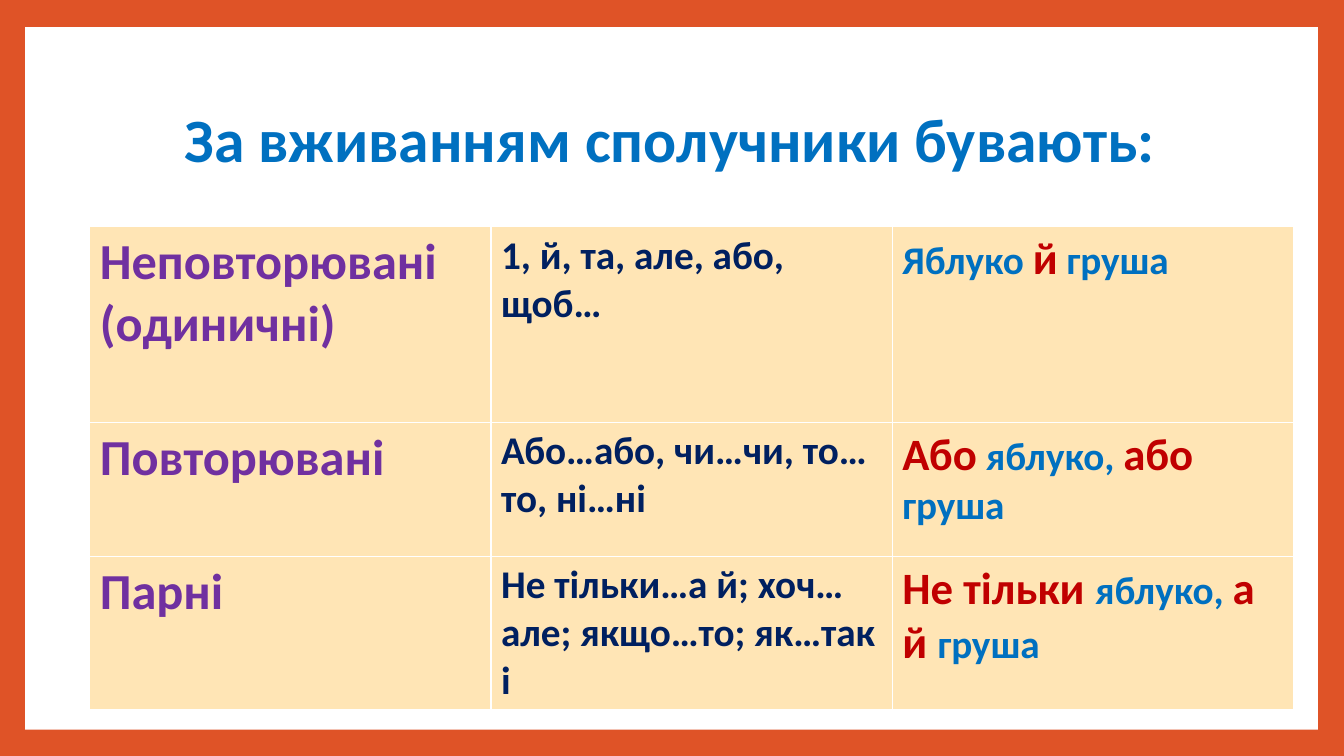
from pptx import Presentation
from pptx import util as u
from pptx.dml.color import RGBColor
from pptx.enum import shapes, text

ORANGE = RGBColor(0xDF, 0x53, 0x27)
WHITE = RGBColor(0xFF, 0xFF, 0xFF)
CREAM = RGBColor(0xFF, 0xE5, 0xB5)
BLUE = RGBColor(0x00, 0x70, 0xC0)
NAVY = RGBColor(0x00, 0x20, 0x60)
PURPLE = RGBColor(0x70, 0x30, 0xA0)
RED = RGBColor(0xC0, 0x00, 0x00)

KIND = (36, PURPLE)
LIST = (28, NAVY)
WORD = (28, BLUE)
JOIN = (32, RED)

ROW_HEIGHTS = (1.94, 1.33, 1.52)
ROWS = [
    [[("Неповторювані (одиничні)", KIND)],
     [("1, й, та, але, або, щоб…", LIST)],
     [("Яблуко ", WORD), ("й", JOIN), (" груша", WORD)]],
    [[("Повторювані", KIND)],
     [("Або…або, чи…чи, то…то, ні…ні", LIST)],
     [("Або", JOIN), (" яблуко, ", WORD), ("або", JOIN), (" груша", WORD)]],
    [[("Парні", KIND)],
     [("Не тільки…а й; хоч…але; якщо…то; як…так і", LIST)],
     [("Не тільки ", JOIN), ("яблуко, ", WORD), ("а й ", JOIN), ("груша", WORD)]],
]


class SlideBuilder:
    """Draws styled elements on the current page."""

    def __init__(self, page, font_name):
        self.page = page
        self.font_name = font_name

    def background(self, color):
        fill = self.page.background.fill
        fill.solid()
        fill.fore_color.rgb = color

    def panel(self, left, top, width, height, color):
        box = self.page.shapes.add_shape(
            shapes.MSO_SHAPE.RECTANGLE, u.Inches(left), u.Inches(top),
            u.Inches(width), u.Inches(height))
        box.shadow.inherit = False
        box.fill.solid()
        box.fill.fore_color.rgb = color
        box.line.fill.background()

    def add_words(self, para, pieces):
        para.font.name = self.font_name
        para.font.bold = True
        for words, (size, color) in pieces:
            span = para.add_run()
            span.text = words
            font = para.font if len(pieces) == 1 else span.font
            font.size = u.Pt(size)
            font.color.rgb = color

    def title(self, left, top, width, height, words, style):
        box = self.page.shapes.add_textbox(
            u.Inches(left), u.Inches(top), u.Inches(width), u.Inches(height))
        frame = box.text_frame
        frame.word_wrap = True
        frame.vertical_anchor = text.MSO_ANCHOR.MIDDLE
        para = frame.paragraphs[0]
        para.alignment = text.PP_ALIGN.CENTER
        para.line_spacing = 0.9
        self.add_words(para, [(words, style)])

    def table(self, left, top, width, heights, rows, color):
        grid = self.page.shapes.add_table(
            len(rows), len(rows[0]), u.Inches(left), u.Inches(top),
            u.Inches(width), u.Inches(sum(heights))).table
        grid.horz_banding = False
        for row, height, contents in zip(grid.rows, heights, rows):
            row.height = u.Inches(height)
            for cell, pieces in zip(row.cells, contents):
                cell.fill.solid()
                cell.fill.fore_color.rgb = color
                self.add_words(cell.text_frame.paragraphs[0], pieces)


def main():
    deck = Presentation()
    deck.slide_width = u.Inches(13.33)
    deck.slide_height = u.Inches(7.5)
    page = deck.slides.add_slide(deck.slide_layouts[6])
    builder = SlideBuilder(page, "Calibri")
    builder.background(ORANGE)
    builder.panel(0.25, 0.27, 12.82, 6.97, WHITE)
    builder.title(1.25, 0.67, 10.8, 1.48,
                  "За вживанням сполучники бувають:", (44, BLUE))
    builder.table(0.89, 2.25, 11.94, ROW_HEIGHTS, ROWS, CREAM)
    deck.save("out.pptx")


if __name__ == "__main__":
    main()
